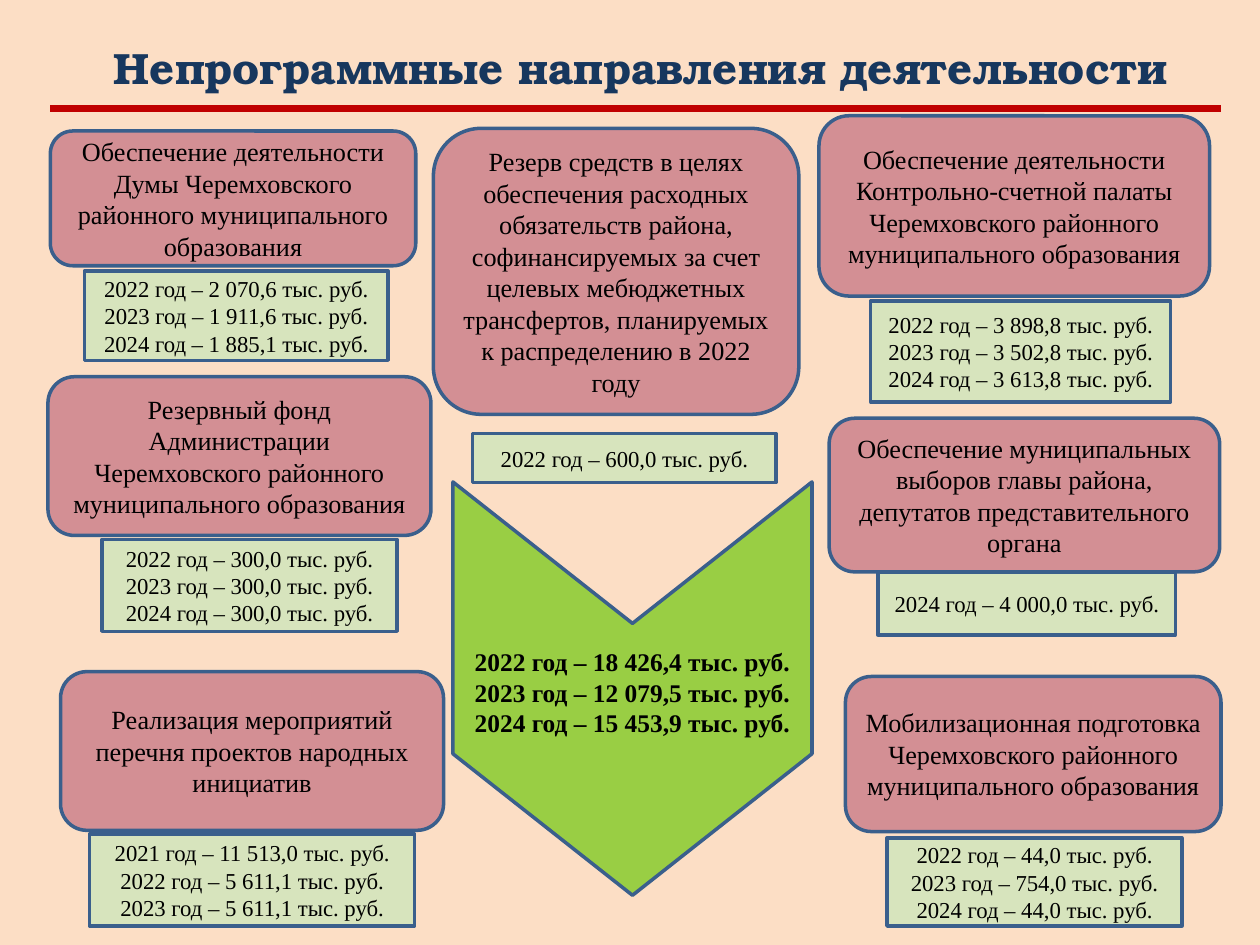
from dataclasses import dataclass

import pptx
import pptx.dml.color
import pptx.enum.shapes
import pptx.enum.text
import pptx.oxml.ns
import pptx.util
from lxml import etree

Pt = pptx.util.Pt
Shapes = pptx.enum.shapes.MSO_SHAPE
Align = pptx.enum.text.PP_ALIGN
Anchor = pptx.enum.text.MSO_ANCHOR


@dataclass(frozen=True)
class Theme:
    """Colours, fonts and type sizes of the slide."""
    background: str = "FCDEC5"
    direction: str = "D38F94"
    amount: str = "D7E4BD"
    total: str = "99CE44"
    outline: str = "3A5F8C"
    rule: str = "C00000"
    title: str = "17375E"
    text: str = "000000"
    title_font: str = "TeX Gyre Bonum"
    body_font: str = "Times New Roman"
    title_size: float = 25
    direction_size: float = 15
    total_size: float = 14.5
    amount_size: float = 13
    outline_width: float = 2
    rule_width: float = 3.75


THEME = Theme()

DIRECTIONS = [
    ("Обеспечение деятельности Думы Черемховского районного муниципального образования",
     (28.8, 74.9, 208.8, 77), (48.2, 154.8, 173.5, 51.1),
     [(2022, "2 070,6"), (2023, "1 911,6"), (2024, "1 885,1")]),
    ("Обеспечение деятельности Контрольно-счетной палаты Черемховского районного "
     "муниципального образования",
     (468, 66.2, 223.2, 103), (497.5, 172.1, 171.4, 57.6),
     [(2022, "3 898,8"), (2023, "3 502,8"), (2024, "3 613,8")]),
    ("Резервный фонд Администрации Черемховского районного муниципального образования",
     (27.4, 215.3, 218.9, 90.7), (58.3, 308.2, 168.5, 52.6),
     [(2022, "300,0"), (2023, "300,0"), (2024, "300,0")]),
    ("Обеспечение муниципальных выборов главы района, депутатов представительного органа",
     (473.8, 239, 223.2, 87.8), (501.8, 326.9, 169.9, 36),
     [(2024, "4 000,0")]),
    ("Мобилизационная подготовка Черемховского районного муниципального образования",
     (483.1, 386.6, 214.6, 88.6), (506.9, 478.8, 168.5, 50.4),
     [(2022, "44,0"), (2023, "754,0"), (2024, "44,0")]),
    ("Реализация мероприятий перечня проектов народных инициатив",
     (34.6, 383.8, 218.9, 90.7), (51.1, 476.6, 185.8, 52.6),
     [(2021, "11 513,0"), (2022, "5 611,1"), (2023, "5 611,1")]),
    ("Резерв средств в целях обеспечения расходных обязательств района, "
     "софинансируемых за счет целевых мебюджетных трансфертов, планируемых "
     "к распределению в 2022 году",
     (247.7, 73.4, 208.8, 163.4), (270, 247.7, 173.5, 28.1),
     [(2022, "600,0")]),
]

TOTALS = [(2022, "18 426,4"), (2023, "12 079,5"), (2024, "15 453,9")]


def color(value):
    """Turn a hex string into a colour."""
    return pptx.dml.color.RGBColor.from_string(value)


def amount_lines(amounts):
    """Write one line for each year and amount."""
    return "\n".join(f"{year} год – {amount} тыс. руб." for year, amount in amounts)


def write(shape, text, size, font=THEME.body_font, ink=THEME.text,
          bold=False, align=Align.CENTER, anchor=Anchor.MIDDLE):
    """Put formatted text into a shape."""
    frame = shape.text_frame
    frame.text = text
    frame.word_wrap = True
    frame.vertical_anchor = anchor
    for paragraph in frame.paragraphs:
        paragraph.alignment = align
        for run in paragraph.runs:
            run.font.name = font
            run.font.size = Pt(size)
            run.font.bold = bold
            run.font.color.rgb = color(ink)


def add_outlined_shape(slide, kind, box, fill):
    """Add a filled shape with the common outline."""
    shape = slide.shapes.add_shape(kind, *map(Pt, box))
    shape.shadow.inherit = False
    shape.fill.solid()
    shape.fill.fore_color.rgb = color(fill)
    shape.line.color.rgb = color(THEME.outline)
    shape.line.width = Pt(THEME.outline_width)
    return shape


def add_title(slide, box):
    """Place the heading with the red rule along the bottom of its box."""
    left, top, width, height = box
    heading = slide.shapes.add_textbox(*map(Pt, (left + 5.8, top, width - 5.8, height)))
    write(heading, "Непрограммные направления деятельности", THEME.title_size,
          THEME.title_font, THEME.title, bold=True)
    bottom = top + height
    rule = slide.shapes.add_connector(
        pptx.enum.shapes.MSO_CONNECTOR.STRAIGHT,
        *map(Pt, (left, bottom, left + width, bottom)))
    rule.line.color.rgb = color(THEME.rule)
    rule.line.width = Pt(THEME.rule_width)
    properties = rule._element.spPr
    etree.SubElement(properties, pptx.oxml.ns.qn("a:effectLst"))


def add_direction(slide, name, name_box, amount_box, amounts):
    """Place a direction's name box and its amounts box."""
    name_shape = add_outlined_shape(
        slide, Shapes.FLOWCHART_ALTERNATE_PROCESS, name_box, THEME.direction)
    write(name_shape, name, THEME.direction_size)
    amount_shape = add_outlined_shape(slide, Shapes.RECTANGLE, amount_box, THEME.amount)
    write(amount_shape, amount_lines(amounts), THEME.amount_size)


def add_total(slide, box):
    """Place the downward chevron with the totals inside its box."""
    left, top, width, height = box
    inset = (height - width) / 2
    chevron = add_outlined_shape(
        slide, Shapes.CHEVRON, (left - inset, top + inset, height, width), THEME.total)
    chevron.adjustments[0] = 0.394
    chevron.rotation = 90
    label = slide.shapes.add_textbox(
        *map(Pt, (left + 5.4, top + 90.4, width - 8.6, 59.8)))
    write(label, amount_lines(TOTALS), THEME.total_size, bold=True,
          align=Align.LEFT, anchor=Anchor.TOP)


def main():
    """Build and save the slide."""
    presentation = pptx.Presentation()
    presentation.slide_width, presentation.slide_height = Pt(720), Pt(540)
    slide = presentation.slides.add_slide(presentation.slide_layouts[6])
    slide.background.fill.solid()
    slide.background.fill.fore_color.rgb = color(THEME.background)
    add_total(slide, (258.8, 275.4, 205.2, 236.2))
    for direction in DIRECTIONS:
        add_direction(slide, *direction)
    add_title(slide, (28.8, 14.4, 668.9, 47.5))
    presentation.save("out.pptx")


if __name__ == "__main__":
    main()
